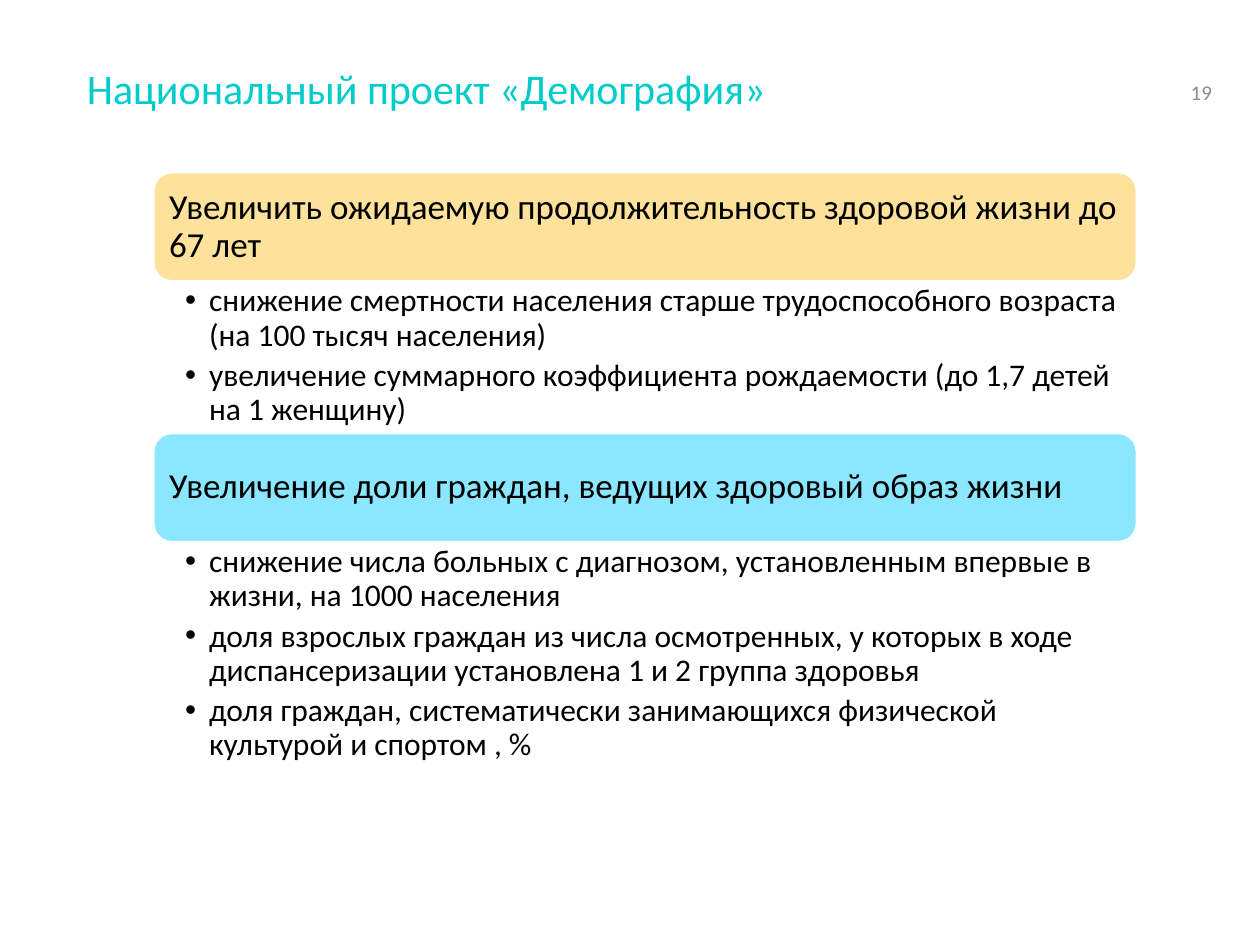
from lxml.etree import SubElement
from pptx import Presentation
from pptx.dml.color import RGBColor
from pptx.enum.shapes import MSO_SHAPE
from pptx.enum.text import MSO_ANCHOR, PP_ALIGN
from pptx.oxml.ns import qn
from pptx.util import Inches, Pt

TEAL = RGBColor(0x00, 0xCC, 0xCC)
GRAY = RGBColor(0x8C, 0x8C, 0x90)
BLACK = RGBColor(0x00, 0x00, 0x00)
WHITE = RGBColor(0xFF, 0xFF, 0xFF)
YELLOW = RGBColor(0xFE, 0xE2, 0x9C)
BLUE = RGBColor(0x8B, 0xE6, 0xFF)

LEFT, WIDTH = 1.22, 7.8
BANNER_HEIGHT = 0.86

GOALS = [
    ("Увеличить ожидаемую продолжительность здоровой жизни до 67 лет", YELLOW, 1.21, [
        "снижение смертности населения старше трудоспособного возраста (на 100 тысяч населения)",
        "увеличение суммарного коэффициента рождаемости (до 1,7 детей на 1 женщину)",
    ]),
    ("Увеличение доли граждан, ведущих здоровый образ жизни", BLUE, 1.83, [
        "снижение числа больных с диагнозом, установленным впервые в жизни, на 1000 населения",
        "доля взрослых граждан из числа осмотренных, у которых в ходе диспансеризации "
        "установлена 1 и 2 группа здоровья",
        "доля граждан, систематически занимающихся физической культурой и спортом , %",
    ]),
]


class SlideBuilder:
    """Holds the text style and the slide, and adds each kind of element."""

    def __init__(self, slide, font="Calibri"):
        self.slide = slide
        self.font = font

    def frame(self, shape, insets, anchor, wrap=True):
        frame = shape.text_frame
        frame.word_wrap = wrap
        frame.vertical_anchor = anchor
        (frame.margin_left, frame.margin_top,
         frame.margin_right, frame.margin_bottom) = map(Inches, insets)
        return frame

    def set_text(self, paragraph, text, size, color, spacing=0.9):
        paragraph.text = text
        paragraph.alignment = PP_ALIGN.LEFT
        paragraph.line_spacing = spacing
        paragraph.font.name = self.font
        paragraph.font.size = Pt(size)
        paragraph.font.color.rgb = color

    def label(self, box, text, size, color, inset, anchor, spacing, wrap=True):
        label = self.slide.shapes.add_textbox(*map(Inches, box))
        frame = self.frame(label, (0, inset, 0, inset), anchor, wrap)
        self.set_text(frame.paragraphs[0], text, size, color, spacing)

    def banner(self, top, text, fill):
        banner = self.slide.shapes.add_shape(
            MSO_SHAPE.ROUNDED_RECTANGLE,
            *map(Inches, (LEFT, top, WIDTH, BANNER_HEIGHT)))
        banner.shadow.inherit = False
        banner.fill.solid()
        banner.fill.fore_color.rgb = fill
        banner.line.color.rgb = WHITE
        banner.line.width = Pt(1)
        frame = self.frame(banner, [0.08] * 4, MSO_ANCHOR.MIDDLE)
        self.set_text(frame.paragraphs[0], text, 20, BLACK)

    def bullets(self, top, height, items):
        measures = self.slide.shapes.add_textbox(
            *map(Inches, (LEFT, top, WIDTH, height)))
        frame = self.frame(measures, (0.25, 0.03, 0.14, 0.03), MSO_ANCHOR.TOP)
        for index, item in enumerate(items):
            paragraph = frame.add_paragraph() if index else frame.paragraphs[0]
            paragraph.level = 1
            paragraph.space_after = Pt(3.6)
            properties = paragraph._p.get_or_add_pPr()
            properties.set("marL", str(Inches(0.19)))
            properties.set("indent", str(-Inches(0.19)))
            SubElement(properties, qn("a:buFont"), typeface="Arial")
            SubElement(properties, qn("a:buChar"), char="•")
            self.set_text(paragraph, item, 18, BLACK)


def main():
    presentation = Presentation()
    presentation.slide_width = Inches(10)
    presentation.slide_height = Inches(7.5)
    builder = SlideBuilder(
        presentation.slides.add_slide(presentation.slide_layouts[6]))

    builder.label((0.69, 0.4, 8.62, 1.03), "Национальный проект «Демография»",
                  24, TEAL, 0.05, MSO_ANCHOR.TOP, Pt(32))
    builder.label((9.45, 0.4, 0.38, 0.47), "19",
                  12, GRAY, 0.04, MSO_ANCHOR.BOTTOM, 1.0, wrap=False)

    top = 1.37
    for goal, fill, height, measures in GOALS:
        builder.banner(top, goal, fill)
        top += BANNER_HEIGHT
        builder.bullets(top, height, measures)
        top += height

    presentation.save("out.pptx")


if __name__ == "__main__":
    main()
